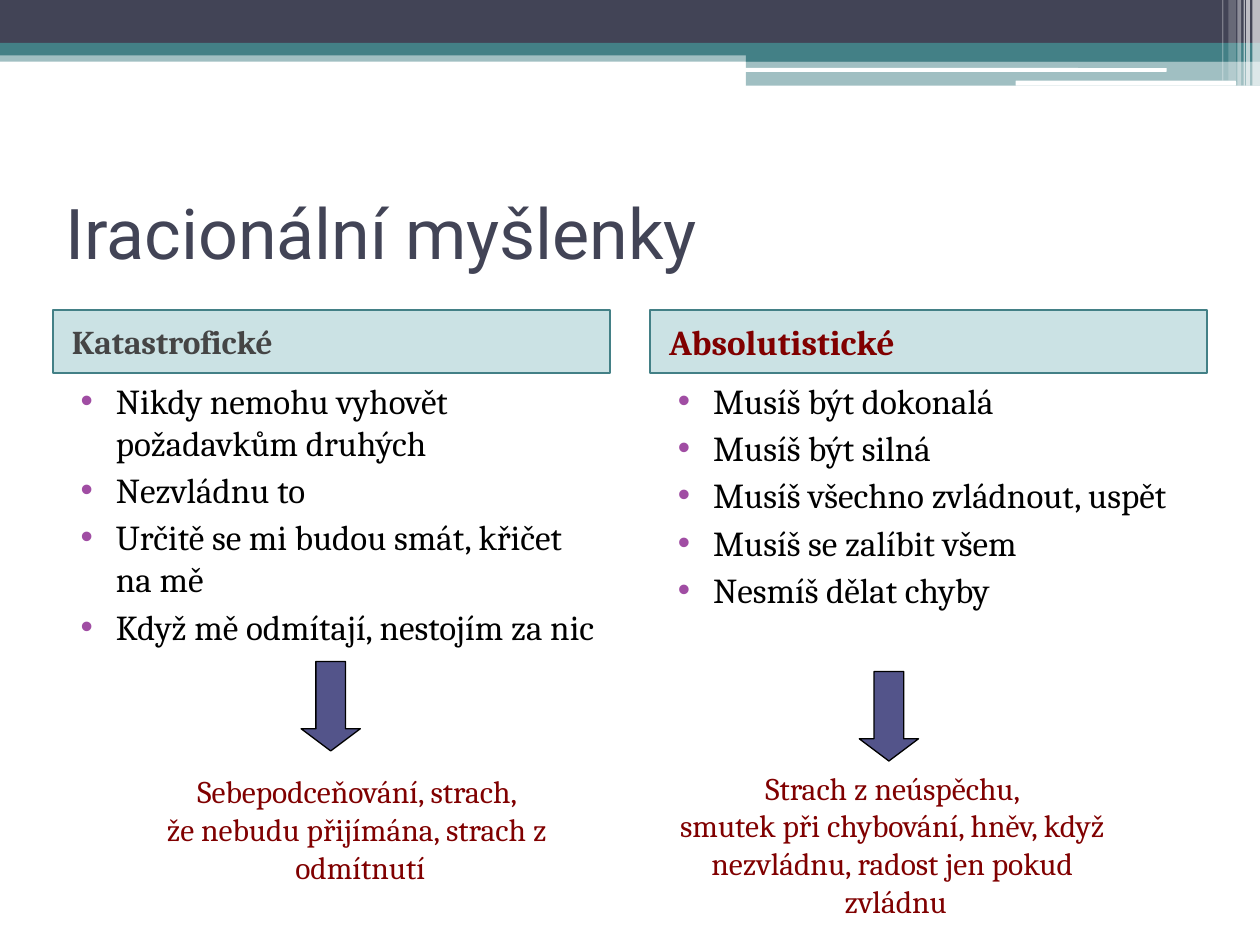
from typing import NamedTuple

from lxml.etree import SubElement
from pptx import Presentation
from pptx.dml.color import RGBColor
from pptx.enum.shapes import MSO_SHAPE
from pptx.enum.text import MSO_ANCHOR, MSO_AUTO_SIZE, PP_ALIGN
from pptx.oxml.ns import qn
from pptx.util import Inches, Pt

COLS, ROWS = 100, 75
WIDE, HIGH = Inches(10), Inches(7.5)

WHITE = RGBColor(0xFF, 0xFF, 0xFF)
BLACK = RGBColor(0, 0, 0)
NAVY = RGBColor(0x42, 0x44, 0x56)
TEAL = RGBColor(0x43, 0x80, 0x86)
AQUA = RGBColor(0x32, 0x8E, 0x97)
GREY = RGBColor(0x45, 0x45, 0x45)
MAROON = RGBColor(0x80, 0, 0)
PURPLE = RGBColor(0xA0, 0x4D, 0xA3)
INDIGO = RGBColor(0x53, 0x54, 0x8A)
SERIF, SANS = "Cambria", "Roboto"


class Box(NamedTuple):
    """Left, top, width and height in grid columns and rows."""
    x: float
    y: float
    w: float
    h: float


class Band(NamedTuple):
    box: Box
    fill: RGBColor
    alpha: int = 100
    kind: MSO_SHAPE = MSO_SHAPE.RECTANGLE


class Column(NamedTuple):
    x: float
    head: str
    size: int
    color: RGBColor
    items: list[str]
    arrow: Box
    note: Box
    lines: list[str]


BANDS = [
    Band(Box(0, 4, 100, 0.9), TEAL, 50),
    Band(Box(0, 0, 100, 3.4), NAVY),
    Band(Box(0, 3.4, 100, 1), TEAL),
    Band(Box(59.2, 3.9, 40.8, 1), TEAL),
    Band(Box(59.2, 4.8, 40.8, 2), TEAL, 50),
    Band(Box(59.1, 5.4, 33.5, 0.3), WHITE, kind=MSO_SHAPE.ROUNDED_RECTANGLE),
    Band(Box(80.6, 6.4, 17.5, 0.4), WHITE, kind=MSO_SHAPE.ROUNDED_RECTANGLE),
] + [
    Band(Box(x, 0, w, h), WHITE, alpha)
    for x, w, h, alpha in [
        (99.4, 0.6, 6.8, 65), (98.9, 0.3, 6.8, 65), (98.7, 0.1, 6.8, 60),
        (98.2, 0.3, 6.8, 40), (97.5, 0.6, 6.4, 20), (97, 0.1, 6.4, 30),
    ]
]

COLUMNS = [
    Column(4.2, "Katastrofické", 19, GREY,
           ["Nikdy nemohu vyhovět požadavkům druhých", "Nezvládnu to",
            "Určitě se mi budou smát, křičet na mě",
            "Když mě odmítají, nestojím za nic"],
           Box(23.9, 52.5, 4.7, 7.1), Box(3.6, 60.8, 50, 10.1),
           ["Sebepodceňování, strach, ", "že nebudu přijímána, strach z ",
            "odmítnutí"]),
    Column(51.6, "Absolutistické", 20, MAROON,
           ["Musíš být dokonalá", "Musíš být silná",
            "Musíš všechno zvládnout, uspět", "Musíš se zalíbit všem",
            "Nesmíš dělat chyby"],
           Box(68.2, 53.3, 4.7, 7.1), Box(46.1, 60.5, 50, 13.1),
           ["Strach z neúspěchu, ", "smutek při chybování, hněv, když ",
            "nezvládnu, radost jen pokud ", "zvládnu"]),
]


def scale(box: Box) -> list[int]:
    """Turn grid units into slide lengths."""
    return [round(n * unit) for n, unit in
            zip(box, (WIDE / COLS, HIGH / ROWS) * 2)]


def place(shape, box: Box) -> None:
    shape.left, shape.top, shape.width, shape.height = scale(box)


def paint(shape, color: RGBColor, alpha: int = 100) -> None:
    """Fill a shape, with its opacity in percent."""
    shape.fill.solid()
    shape.fill.fore_color.rgb = color
    if alpha < 100:
        tint = shape.fill._xPr.find(qn("a:solidFill"))[0]
        SubElement(tint, qn("a:alpha"), val=str(alpha * 1000))


def draw(slide, kind: MSO_SHAPE, box: Box, color: RGBColor, alpha: int = 100):
    shape = slide.shapes.add_shape(kind, *scale(box))
    shape.shadow.inherit = False
    shape.line.fill.background()
    paint(shape, color, alpha)
    return shape


def write(shape, lines: list[str], size: int, color: RGBColor,
          font: str = SERIF, bold: bool = False, align=PP_ALIGN.LEFT,
          anchor=MSO_ANCHOR.TOP, gap: int = 0, indent: tuple = (0, 0),
          bullet: bool = False) -> None:
    """Set one paragraph per line; indent is margin and first line in inches."""
    frame = shape.text_frame
    frame.text = "\n".join(lines)
    frame.word_wrap = True
    frame.auto_size = MSO_AUTO_SIZE.NONE
    frame.vertical_anchor = anchor
    for i, para in enumerate(frame.paragraphs):
        para.alignment = align
        para.space_before = Pt(gap if i else 0)
        props = para._p.get_or_add_pPr()
        props.set("marL", str(Inches(indent[0])))
        props.set("indent", str(Inches(indent[1])))
        if bullet:
            tint = SubElement(props, qn("a:buClr"))
            SubElement(tint, qn("a:srgbClr"), val=str(PURPLE))
            SubElement(props, qn("a:buFont"), typeface="Arial")
            SubElement(props, qn("a:buChar"), char="•")
        para.font.name, para.font.size = font, Pt(size)
        para.font.bold, para.font.color.rgb = bold, color


def add_column(slide, col: Column, head, body) -> None:
    place(head, Box(col.x, 24.6, 44.2, 5))
    paint(head, AQUA, 25)
    head.line.color.rgb, head.line.width = TEAL, Pt(1)
    write(head, [col.head], col.size, col.color, bold=True,
          anchor=MSO_ANCHOR.MIDDLE, indent=(0.05, 0))

    place(body, Box(col.x, 29.6, 44.2, 42.5))
    write(body, col.items, 20, BLACK, gap=3, indent=(0.4, -0.28), bullet=True)

    arrow = draw(slide, MSO_SHAPE.DOWN_ARROW, col.arrow, INDIGO)
    arrow.adjustments[0], arrow.adjustments[1] = 0.5, 0.375
    arrow.line.color.rgb, arrow.line.width = BLACK, Pt(0.75)

    note = slide.shapes.add_textbox(*scale(col.note))
    write(note, col.lines, 18, MAROON, align=PP_ALIGN.CENTER)


def main() -> None:
    deck = Presentation()
    deck.slide_width, deck.slide_height = WIDE, HIGH
    slide = deck.slides.add_slide(deck.slide_layouts.get_by_name("Comparison"))
    for band in BANDS:
        draw(slide, band.kind, band.box, band.fill, band.alpha)

    title, *parts = slide.placeholders
    place(title, Box(4.2, 12.5, 91.7, 11.7))
    write(title, ["Iracionální myšlenky"], 40, NAVY, font=SANS,
          anchor=MSO_ANCHOR.MIDDLE)
    for col, head, body in zip(COLUMNS, parts[::2], parts[1::2]):
        add_column(slide, col, head, body)
    deck.save("out.pptx")


if __name__ == "__main__":
    main()
